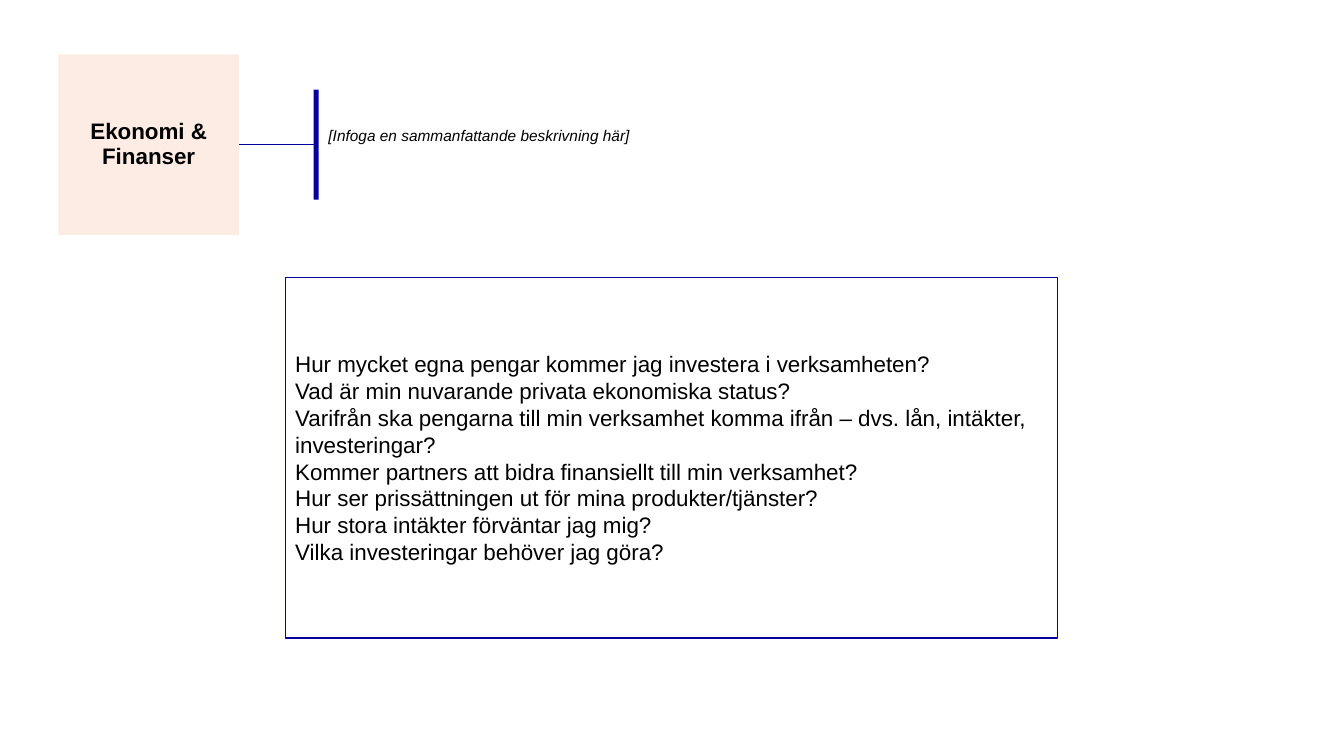
from dataclasses import dataclass

from lxml.etree import SubElement
from pptx import Presentation
from pptx.dml.color import RGBColor
from pptx.enum.shapes import MSO_CONNECTOR, MSO_SHAPE
from pptx.enum.text import MSO_ANCHOR, PP_ALIGN
from pptx.oxml.ns import qn
from pptx.util import Inches, Pt


@dataclass(frozen=True)
class Theme:
    font: str = "Arial"
    ink: RGBColor = RGBColor(0x00, 0x00, 0x00)
    navy: RGBColor = RGBColor(0x03, 0x00, 0x9F)
    peach: RGBColor = RGBColor(0xFD, 0xEC, 0xE3)
    body: int = 16
    note: int = 11
    rule: int = 1


THEME = Theme()

TITLE = "Ekonomi & Finanser"
SUMMARY = "[Infoga en sammanfattande beskrivning här]"
QUESTIONS = [
    "Hur mycket egna pengar kommer jag investera i verksamheten?",
    "Vad är min nuvarande privata ekonomiska status?",
    "Varifrån ska pengarna till min verksamhet komma ifrån – dvs. lån, "
    "intäkter, investeringar?",
    "Kommer partners att bidra finansiellt till min verksamhet?",
    "Hur ser prissättningen ut för mina produkter/tjänster?",
    "Hur stora intäkter förväntar jag mig?",
    "Vilka investeringar behöver jag göra?",
]


def add_rect(slide, x, y, w, h, fill=None, line=None):
    rect = slide.shapes.add_shape(
        MSO_SHAPE.RECTANGLE, Inches(x), Inches(y), Inches(w), Inches(h))
    rect.shadow.inherit = False
    if fill is None:
        rect.fill.background()
    else:
        rect.fill.solid()
        rect.fill.fore_color.rgb = fill
    if line is None:
        rect.line.fill.background()
    else:
        rect.line.color.rgb = line
        rect.line.width = Pt(THEME.rule)
    return rect


def write(frame, lines, size, align=PP_ALIGN.LEFT, bold=False, italic=False):
    frame.word_wrap = True
    for i, text in enumerate(lines):
        para = frame.add_paragraph() if i else frame.paragraphs[0]
        para.alignment = align
        run = para.add_run()
        run.text = text
        font = run.font
        font.name, font.size = THEME.font, Pt(size)
        font.bold, font.italic = bold, italic
        font.color.rgb = THEME.ink


def add_header(slide, x, y, side):
    # Title square
    square = add_rect(slide, x, y, side, side, fill=THEME.peach)
    frame = square.text_frame
    frame.vertical_anchor = MSO_ANCHOR.MIDDLE
    frame.margin_left = frame.margin_right = 0
    write(frame, [TITLE], THEME.body, PP_ALIGN.CENTER, bold=True)
    frame.paragraphs[0].line_spacing = 0.9

    # Link from the square to the bar
    mid = y + side / 2
    edge = x + side
    bar = edge + 0.74
    link = slide.shapes.add_connector(
        MSO_CONNECTOR.STRAIGHT,
        Inches(bar), Inches(mid), Inches(edge), Inches(mid))
    link.line.color.rgb = THEME.navy
    link.line.width = Pt(THEME.rule)
    SubElement(link._element.spPr, qn("a:effectLst"))

    # Bar, centred on the link
    thick, tall = 0.05, 1.09
    add_rect(slide, bar, mid - tall / 2, thick, tall, fill=THEME.navy)

    # Summary beside the bar
    note = slide.shapes.add_textbox(
        Inches(bar + thick), Inches(y + 0.66), Inches(3.8), Inches(0.29))
    write(note.text_frame, [SUMMARY], THEME.note, italic=True)


def add_questions(slide, x, y, w, h):
    box = add_rect(slide, x, y, w, h, line=THEME.navy)
    box.text_frame.vertical_anchor = MSO_ANCHOR.MIDDLE
    write(box.text_frame, QUESTIONS, THEME.body)


def main():
    deck = Presentation()
    deck.slide_width, deck.slide_height = Inches(13.33), Inches(7.5)
    slide = deck.slides.add_slide(deck.slide_layouts[6])
    add_questions(slide, 2.83, 2.75, 7.66, 3.58)
    add_header(slide, 0.58, 0.54, 1.79)
    deck.save("out.pptx")


if __name__ == "__main__":
    main()
